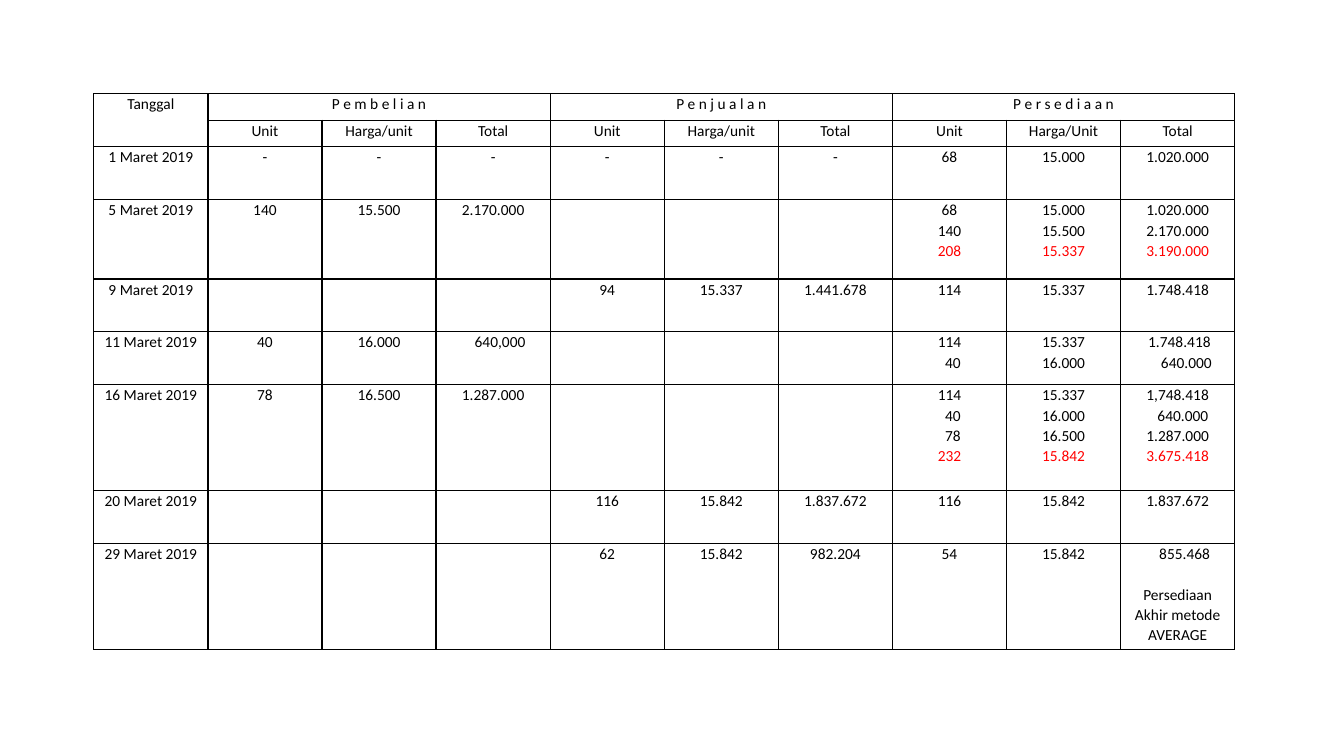
from collections import namedtuple
from lxml.etree import SubElement as Sub
from pptx import Presentation as Deck
from pptx.dml.color import RGBColor as Color
from pptx.enum.text import PP_ALIGN as Align
from pptx.oxml.ns import qn
from pptx.util import Pt

# pad: indent in word spaces; gap: space above in points
Line = namedtuple("Line", "text pad tone gap", defaults=(0, "ink", 0))


def red(text):
    return Line(text, tone="sum")


# Content: each cell is one string or a list of lines
GROUPS = ["P e m b e l i a n", "P e n j u a l a n", "P e r s e d i a a n"]
HEADS = ["Unit", "Harga/unit", "Total"]
NONE = [""] * 3
DASH = ["-"] * 3
# date, purchase, sale, stock, height in header rows
DAYS = [
    ("1 Maret 2019", DASH, DASH, ["68", "15.000", "1.020.000"], 2),
    ("5 Maret 2019", ["140", "15.500", "2.170.000"], NONE,
     [["68", "140", red("208")],
      ["15.000", "15.500", red("15.337")],
      ["1.020.000", "2.170.000", red("3.190.000")]], 3),
    ("9 Maret 2019", NONE, ["94", "15.337", "1.441.678"],
     ["114", "15.337", "1.748.418"], 2),
    ("11 Maret 2019", ["40", "16.000", [Line("640,000", 4)]], NONE,
     [["114", Line("40", 2)],
      ["15.337", "16.000"],
      [Line("1.748.418", 1), Line("640.000", 5)]], 2),
    ("16 Maret 2019", ["78", "16.500", "1.287.000"], NONE,
     [["114", Line("40", 2), Line("78", 2), red("232")],
      ["15.337", "16.000", "16.500", red("15.842")],
      ["1,748.418", Line("640.000", 3), "1.287.000", red("3.675.418")]], 4),
    ("20 Maret 2019", NONE, ["116", "15.842", "1.837.672"],
     ["116", "15.842", "1.837.672"], 2),
    ("29 Maret 2019", NONE, ["62", "15.842", "982.204"],
     ["54", "15.842",
      [Line("855.468", 4), Line("Persediaan", gap=14.6), "Akhir metode", "AVERAGE"]], 4),
]

THEME = {"font": "Calibri", "size": Pt(11), "ink": Color(0, 0, 0),
         "sum": Color(255, 0, 0), "rule": Pt(1)}
WIDE, HIGH = Pt(960), Pt(540)
LEFT, TOP = Pt(67), Pt(67)
COL, ROW = Pt(81.5), Pt(18.9)
SPACE = Pt(2.49)  # width of one word space
INSET = {"margin_left": Pt(5), "margin_right": Pt(5),
         "margin_top": 0, "margin_bottom": 0}


def apply(item, form):
    for name, value in form.items():
        setattr(item, name, value)


def border(cell):
    props = cell._tc.get_or_add_tcPr()
    for side in ("lnL", "lnR", "lnT", "lnB"):
        edge = Sub(props, qn("a:" + side), w=str(THEME["rule"]))
        fill = Sub(edge, qn("a:solidFill"))
        Sub(fill, qn("a:srgbClr"), val=str(THEME["ink"]))


def write(cell, text):
    lines = text if isinstance(text, list) else [text]
    for num, line in enumerate(lines):
        if isinstance(line, str):
            line = Line(line)
        frame = cell.text_frame
        para = frame.add_paragraph() if num else frame.paragraphs[0]
        apply(para, {"alignment": Align.CENTER, "line_spacing": 1.07,
                     "space_before": Pt(line.gap)})
        if line.pad:
            para._p.get_or_add_pPr().set("marL", str(line.pad * SPACE))
        if line.text:
            run = para.add_run()
            run.text = line.text
            apply(run.font, {"name": THEME["font"], "size": THEME["size"]})
            run.font.color.rgb = THEME[line.tone]
        else:
            Sub(para._p, qn("a:endParaRPr"), sz="1100")


def main():
    deck = Deck()
    apply(deck, {"slide_width": WIDE, "slide_height": HIGH})
    slide = deck.slides.add_slide(deck.slide_layouts[6])

    top = ["Tanggal"] + [text for name in GROUPS for text in (name, "", "")]
    stock = [HEADS[0], "Harga/Unit", HEADS[2]]
    rows = [top, [""] + HEADS * 2 + stock]
    rows += [[date] + buy + sale + left for date, buy, sale, left, _ in DAYS]
    spans = [1, 1] + [day[-1] for day in DAYS]

    table = slide.shapes.add_table(len(rows), len(top), LEFT, TOP,
                                   COL * len(top), ROW * sum(spans)).table
    apply(table, {"first_row": False, "horz_banding": False})
    for col in table.columns:
        col.width = COL
    for row, span in zip(table.rows, spans):
        row.height = ROW * span

    table.cell(0, 0).merge(table.cell(1, 0))
    for col in range(1, len(top), len(HEADS)):
        table.cell(0, col).merge(table.cell(0, col + len(HEADS) - 1))

    for row, texts in zip(table.rows, rows):
        for cell, text in zip(row.cells, texts):
            apply(cell, INSET)
            border(cell)
            cell.fill.background()
            write(cell, text)
    deck.save("out.pptx")


if __name__ == "__main__":
    main()
